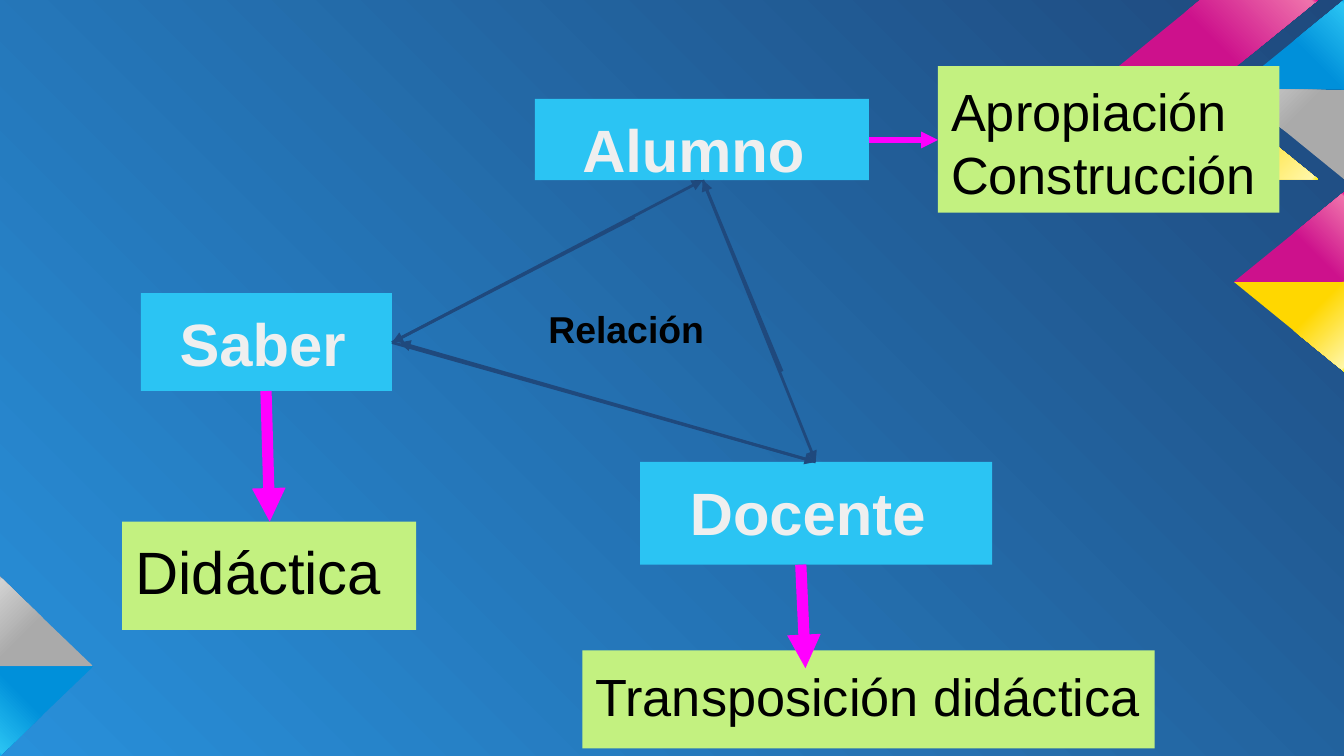
from dataclasses import dataclass

from lxml import etree
from pptx import Presentation
from pptx.dml.color import RGBColor
from pptx.enum.shapes import MSO_CONNECTOR, MSO_SHAPE
from pptx.enum.text import MSO_ANCHOR, PP_ALIGN
from pptx.oxml.ns import qn
from pptx.util import Pt

RECT = MSO_SHAPE.RECTANGLE
LINE = MSO_CONNECTOR.STRAIGHT
TOP = MSO_ANCHOR.TOP
LEFT, MID = PP_ALIGN.LEFT, PP_ALIGN.CENTER
WIDE, HIGH = 720, 405
TILE_W, TILE_H = 59, 48


@dataclass(frozen=True)
class Theme:
    font: str = "Arial"
    sky: str = "2890DA"
    navy: str = "1F497D"
    cyan: str = "2BC4F3"
    lime: str = "C3F180"
    pink: str = "FF00FF"
    pale: str = "EFEFEF"
    ink: str = "000000"
    blue: tuple = ("0090DA", "0090DA", "2BC4F3", "00AEEE")
    gray: tuple = ("AAAAAA", "AAAAAA", "D2D2D2", "B9B9B9")
    rose: tuple = ("CD118C", "CD118C", "F074AC", "EB008B")
    gold: tuple = ("FFD700", "FFD700", "FFF7A9", "FFF100")
    stops: tuple = (0, 54, 98, 100)
    big: int = 32
    mid: int = 28
    small: int = 20
    tiny: int = 14


T = Theme()


def rgb(code):
    return RGBColor.from_string(code)


def blend(fill, root, stops, angle=None):
    fill.gradient()
    grad = next(root.iter(qn("a:gradFill")))
    for child in list(grad):
        grad.remove(child)
    ramp = etree.SubElement(grad, qn("a:gsLst"))
    for spot, code in stops:
        stop = etree.SubElement(ramp, qn("a:gs"), pos=str(spot * 1000))
        etree.SubElement(stop, qn("a:srgbClr"), val=code)
    if angle is None:
        way = etree.SubElement(grad, qn("a:path"), path="circle")
        etree.SubElement(way, qn("a:fillToRect"), t="100000", r="100000")
    else:
        etree.SubElement(grad, qn("a:lin"), ang=str(angle * 60000), scaled="0")


def facet(slide, points, tints, angle):
    spots = [(Pt(x), Pt(y)) for x, y in points]
    pen = slide.shapes.build_freeform(*spots[0])
    pen.add_line_segments(spots[1:], close=True)
    shape = pen.convert_to_shape()
    shape.shadow.inherit = False
    shape.line.fill.background()
    blend(shape.fill, shape._element, zip(T.stops, tints), angle)


def decor(slide):
    edge = WIDE - TILE_W
    for tip, base, tints, angle in (
        (HIGH - TILE_H, HIGH, T.blue, 135),
        (HIGH - TILE_H, HIGH - 2 * TILE_H, T.gray, 225),
    ):
        facet(slide, [(50, tip), (0, tip), (0, base)], tints, angle)
    for tip, base, tints, angle in (
        (TILE_H, 0, T.blue, 315),
        (TILE_H, 2 * TILE_H, T.gray, 225),
        (151, 151 - TILE_H, T.rose, 315),
        (151, 151 + TILE_H, T.gold, 45),
    ):
        facet(slide, [(edge, tip), (WIDE, base), (WIDE, tip)], tints, angle)
    for end, tints, angle in ((0, T.rose, 315), (2 * TILE_H, T.gold, 45)):
        band = [(647, TILE_H), (706, end), (643, end), (584, TILE_H)]
        facet(slide, band, tints, angle)


def write(shape, text, size=T.big, color=T.ink, bold=False, align=LEFT, gap=None):
    frame = shape.text_frame
    frame.word_wrap = True
    frame.vertical_anchor = TOP
    frame.margin_left = frame.margin_right = Pt(7.2)
    frame.margin_top = frame.margin_bottom = Pt(7.2)
    for i, words in enumerate(text.split("\n")):
        para = frame.add_paragraph() if i else frame.paragraphs[0]
        para.alignment = align
        parts = [(words, size, bold)]
        if gap:
            parts.append((" ", gap, False))
        for part, points, heavy in parts:
            run = para.add_run()
            run.text = part
            run.font.name = T.font
            run.font.size = Pt(points)
            run.font.bold = heavy
            run.font.color.rgb = rgb(color)


def box(slide, place, fill, text, **style):
    shape = slide.shapes.add_shape(RECT, *map(Pt, place))
    shape.shadow.inherit = False
    shape.fill.solid()
    shape.fill.fore_color.rgb = rgb(fill)
    shape.line.fill.background()
    write(shape, text, **style)


def label(slide, place, text, **style):
    write(slide.shapes.add_textbox(*map(Pt, place)), text, **style)


def arrow(slide, start, end, color, width):
    line = slide.shapes.add_connector(LINE, *map(Pt, start + end))
    line.line.color.rgb = rgb(color)
    line.line.width = Pt(width)
    etree.SubElement(line.line._get_or_add_ln(), qn("a:tailEnd"), type="triangle")
    etree.SubElement(line._element.spPr, qn("a:effectLst"))


def main():
    deck = Presentation()
    deck.slide_width, deck.slide_height = Pt(WIDE), Pt(HIGH)
    slide = deck.slides.add_slide(deck.slide_layouts[6])
    blend(slide.background.fill, slide._element, ((0, T.sky), (100, T.navy)))
    decor(slide)

    role = dict(color=T.pale, bold=True, align=MID)
    for place, text, gap in (
        ((343, 247.5, 188.5, 55), "Docente", T.big),
        ((75.5, 157, 134.5, 52.5), "Saber", T.tiny),
        ((286.5, 53, 179, 43.5), "Alumno", T.big),
    ):
        box(slide, place, T.cyan, text, gap=gap, **role)

    for place, text, size in (
        ((65.5, 279.5, 157.5, 58), "Didáctica", T.big),
        ((502.5, 35.5, 183, 78.5), "Apropiación\nConstrucción", T.mid),
        ((312, 348.5, 306.5, 52.5), "Transposición didáctica", T.mid),
    ):
        box(slide, place, T.lime, text, size=size)

    label(slide, (279.5, 157, 116, 36), "Relación",
          size=T.small, bold=True, align=MID, gap=T.tiny)

    saber, pupil, tutor = (210, 183.5), (376.5, 96.5), (437, 247.5)
    for start, end in (
        (saber, tutor),
        (tutor, (214, 183.5)),
        (saber, pupil),
        ((340, 116.5), saber),
        (pupil, tutor),
        ((419, 199), pupil),
    ):
        arrow(slide, start, end, T.navy, 1.5)

    for start, end, width in (
        ((142.5, 209.5), (144.5, 279.5), 6),
        ((465.5, 75), (502.5, 75), 3),
        ((429, 302.5), (431.5, 358), 6),
    ):
        arrow(slide, start, end, T.pink, width)

    deck.save("out.pptx")


if __name__ == "__main__":
    main()
